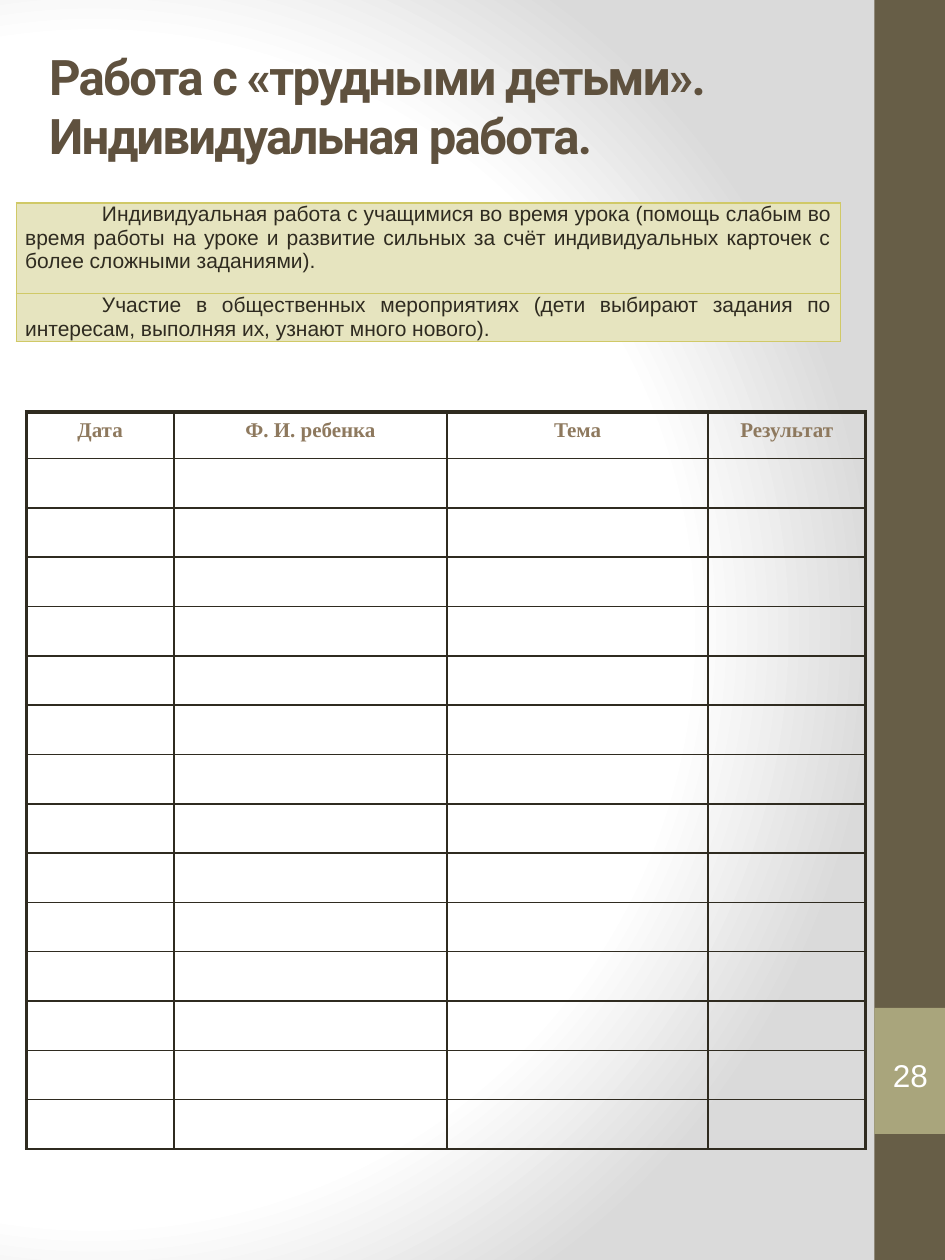
from lxml import etree
from pptx import Presentation
from pptx.dml.color import RGBColor
from pptx.enum.shapes import MSO_SHAPE
from pptx.enum.text import MSO_ANCHOR, MSO_AUTO_SIZE, PP_ALIGN
from pptx.oxml import parse_xml
from pptx.oxml.ns import nsdecls
from pptx.util import Inches, Pt

RECT, PAIR = MSO_SHAPE.RECTANGLE, MSO_SHAPE.DOUBLE_BRACKET
MID = MSO_ANCHOR.MIDDLE
LEFT, MIDDLE, JUST = PP_ALIGN.LEFT, PP_ALIGN.CENTER, PP_ALIGN.JUSTIFY
FIXED = MSO_AUTO_SIZE.NONE

THEME = {
    "bar": "675E47", "badge": "A9A57C", "ink": "2F2B20", "pale": "E6E4BF",
    "rule": "D0C967", "thin": 1, "thick": 2.25,
    "title": dict(name="Roboto", size=Pt(28), bold=True, color="5F513E"),
    "head": dict(name="Times New Roman", size=Pt(12), bold=True, color="8E795E"),
    "body": dict(name="Arial", size=Pt(12), bold=False, color="2F2B20"),
    "page": dict(name="Arial", size=Pt(18), bold=False, color="FFFFFF"),
}


def style(item, vals):
    for key, val in vals.items():
        if key == "color":
            item.color.rgb = RGBColor.from_string(val)
        else:
            setattr(item, key, val)


def edge(cell, hue, wides):
    props = cell._tc.get_or_add_tcPr()
    for spot, (side, wide) in enumerate(wides.items()):
        props.insert(spot, parse_xml(
            f'<a:ln{side} {nsdecls("a")} w="{Pt(wide)}"><a:solidFill>'
            f'<a:srgbClr val="{hue}"/></a:solidFill></a:ln{side}>'))


deck = Presentation()
deck.slide_width, deck.slide_height = Inches(7.5), Inches(10)
COL, ROW = deck.slide_width / 75, deck.slide_height / 100
slide = deck.slides.add_slide(deck.slide_layouts[5])
shapes = slide.shapes

stops = "".join(
    f'<a:gs pos="{pos * 1000}"><a:srgbClr val="{hue}"/></a:gs>'
    for pos, hue in [(0, "FFFFFF"), (75, "FFFFFF"), (100, "DADADA")])
slide.element.cSld.insert(0, parse_xml(
    f'<p:bg {nsdecls("p", "a")}><p:bgPr><a:gradFill rotWithShape="1">'
    f'<a:gsLst>{stops}</a:gsLst><a:path path="circle">'
    '<a:fillToRect l="20000" t="50000" r="100000" b="50000"/></a:path>'
    '</a:gradFill><a:effectLst/></p:bgPr></p:bg>'))

title = shapes.title
style(title, dict(left=int(2.9 * COL), top=0,
                  width=int(69.2 * COL), height=int(16.7 * ROW)))
frame = title.text_frame
frame.text = "Работа с «трудными детьми».\vИндивидуальная работа."
style(frame, dict(vertical_anchor=MID, auto_size=FIXED, word_wrap=True))
frame.paragraphs[0].alignment = LEFT
for run in frame.paragraphs[0].runs:
    style(run.font, THEME["title"])
    run.font._element.set("spc", "-100")

for hue, top, tall in [("bar", 0, 100), ("badge", 80, 10)]:
    bar = shapes.add_shape(RECT, int(69.4 * COL), int(top * ROW),
                           int(5.6 * COL), int(tall * ROW))
    bar.shadow.inherit = False
    bar.fill.solid()
    bar.fill.fore_color.rgb = RGBColor.from_string(THEME[hue])
    bar.line.fill.background()
    title.element.addprevious(bar.element)

heads = ["Дата", "Ф. И. ребенка", "Тема", "Результат"]
wides = [11.7, 21.7, 20.7, 12.5]
count, tall, first = 15, 58.5, 3.7
log = shapes.add_table(count, len(heads), int(2.1 * COL), int(32.7 * ROW),
                       int(sum(wides) * COL), int(tall * ROW)).table
style(log, dict(first_row=False, horz_banding=False))
for col, wide in zip(log.columns, wides):
    col.width = int(wide * COL)
for num, row in enumerate(log.rows):
    row.height = int((first if num == 0 else (tall - first) / (count - 1)) * ROW)
    for pos, cell in enumerate(row.cells):
        cell.fill.background()
        pad = Inches(0.05) if num == 0 else 0
        style(cell, dict(margin_top=pad, margin_bottom=pad))
        bold = {"L": pos == 0, "R": pos == len(heads) - 1, "T": num == 0, "B": False}
        edge(cell, THEME["ink"],
             {side: THEME["thick" if on else "thin"] for side, on in bold.items()})
        if num == 0:
            para = cell.text_frame.paragraphs[0]
            para.text = heads[pos]
            style(para, dict(alignment=MIDDLE, space_before=Pt(2.4)))
            style(para.runs[0].font, THEME["head"])

notes = [
    (7.2, "Индивидуальная работа с учащимися во время урока (помощь слабым во время "
          "работы на уроке и развитие сильных за счёт индивидуальных карточек с более "
          "сложными заданиями)."),
    (3.8, "Участие в общественных мероприятиях (дети выбирают задания по интересам, "
          "выполняя их, узнают много нового)."),
]
plan = shapes.add_table(len(notes), 1, int(1.3 * COL), int(16.1 * ROW),
                        int(65.4 * COL), int(11 * ROW)).table
style(plan, dict(first_row=False, horz_banding=False))
for row, (tall, text) in zip(plan.rows, notes):
    row.height = int(tall * ROW)
    cell = row.cells[0]
    style(cell, dict(margin_left=Inches(0.07), margin_right=Inches(0.07),
                     margin_top=0, margin_bottom=0))
    cell.fill.solid()
    cell.fill.fore_color.rgb = RGBColor.from_string(THEME["pale"])
    edge(cell, THEME["rule"], dict.fromkeys("LRTB", THEME["thin"]))
    para = cell.text_frame.paragraphs[0]
    para.text = text
    para.alignment = JUST
    style(para.runs[0].font, THEME["body"])
    props = para._p.get_or_add_pPr()
    props.set("marL", "0")
    props.set("indent", str(Inches(0.61)))

page = shapes.add_shape(PAIR, int(70 * COL), int(82.4 * ROW),
                        int(4.5 * COL), int(5.8 * ROW))
page.shadow.inherit = False
page.adjustments[0] = 0.18
page.fill.background()
page.line.fill.background()
frame = page.text_frame
style(frame, dict(vertical_anchor=MID, margin_left=0, margin_right=0,
                  margin_top=0, margin_bottom=0))
para = frame.paragraphs[0]
para.text = "28"
para.alignment = MIDDLE
style(para.runs[0].font, THEME["page"])

deck.save("out.pptx")
